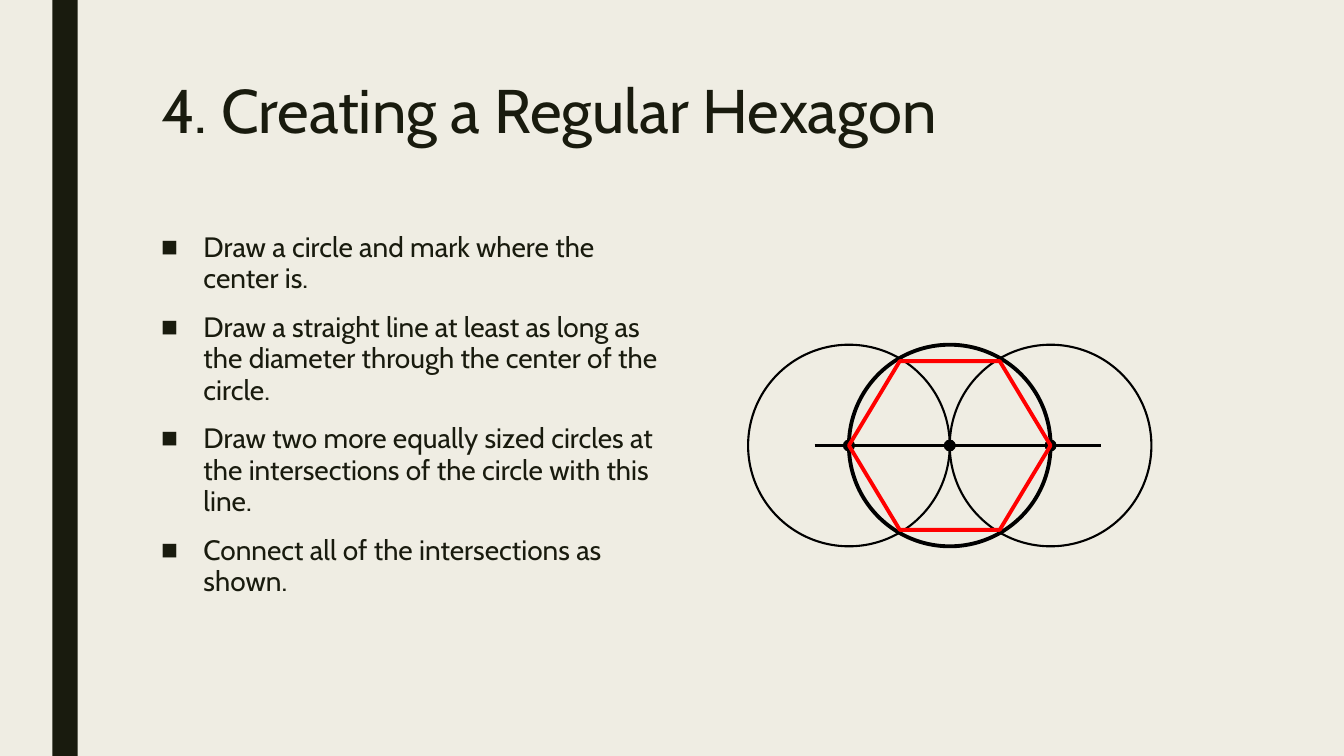
from lxml.etree import SubElement
from pptx import Presentation
from pptx.dml.color import RGBColor
from pptx.enum.shapes import MSO_CONNECTOR, MSO_SHAPE
from pptx.enum.text import MSO_ANCHOR
from pptx.oxml.ns import qn
from pptx.util import Inches, Pt

COLORS = {"paper": "EFEDE3", "ink": "191B0E", "halo": "F0EDE3",
          "black": "000000", "red": "FF0000"}
STEPS = [
    "Draw a circle and mark where the center is.",
    "Draw a straight line at least as long as the diameter through the center of the circle.",
    "Draw two more equally sized circles at the intersections of the circle with this line.",
    "Connect all of the intersections as shown.",
]
MID_X, MID_Y, RADIUS = 9.42, 4.42, 1


def color(name):
    return RGBColor.from_string(COLORS[name])


def write(para, text, size=20, leading=0.94, before=0, after=0, indent=0, bullet=None):
    run = para.add_run()
    run.text = text
    run.font.name = "Cabin"
    run.font.size = Pt(size)
    run.font.color.rgb = color("ink")
    para.line_spacing = leading
    para.space_before = Pt(before)
    para.space_after = Pt(after)
    if bullet:
        props = para._p.get_or_add_pPr()
        props.set("marL", str(Inches(indent)))
        props.set("indent", str(-Inches(indent)))
        SubElement(props, qn("a:buFont")).set("typeface", "Arial")
        SubElement(props, qn("a:buChar")).set("char", bullet)


class Canvas:
    def __init__(self, slide):
        self.slide = slide
        slide.background.fill.solid()
        slide.background.fill.fore_color.rgb = color("paper")

    def shape(self, kind, x, y, w, h, fill=None, line=None, width=1.5):
        item = self.slide.shapes.add_shape(kind, Inches(x), Inches(y), Inches(w), Inches(h))
        item.shadow.inherit = False
        if fill:
            item.fill.solid()
            item.fill.fore_color.rgb = color(fill)
        else:
            item.fill.background()
        if line:
            item.line.color.rgb = color(line)
            item.line.width = Pt(width)
        else:
            item.line.fill.background()
        return item

    def circle(self, x, y, r, **style):
        return self.shape(MSO_SHAPE.OVAL, x - r, y - r, 2 * r, 2 * r, **style)

    def dot(self, x):
        return self.circle(x, MID_Y, 0.085, fill="black", line="halo", width=3.25)

    def line(self, x1, y1, x2, y2, tone="black", width=1.5):
        item = self.slide.shapes.add_connector(
            MSO_CONNECTOR.STRAIGHT, Inches(x1), Inches(y1), Inches(x2), Inches(y2))
        item.line.color.rgb = color(tone)
        item.line.width = Pt(width)
        SubElement(item._element.spPr, qn("a:effectLst"))
        return item

    def text(self, x, y, w, h, lines, **style):
        box = self.slide.shapes.add_textbox(Inches(x), Inches(y), Inches(w), Inches(h))
        frame = box.text_frame
        frame.word_wrap = True
        frame.vertical_anchor = MSO_ANCHOR.TOP
        for i, words in enumerate(lines):
            para = frame.add_paragraph() if i else frame.paragraphs[0]
            write(para, words, **style)
        return box


def main():
    deck = Presentation()
    deck.slide_width, deck.slide_height = Inches(13.33), Inches(7.5)
    art = Canvas(deck.slides.add_slide(deck.slide_layouts[6]))

    art.shape(MSO_SHAPE.RECTANGLE, 0.52, 0, 0.25, 7.5, fill="ink")
    for side in (1, -1):
        art.dot(MID_X + side * RADIUS)
    art.text(1.5, 0.75, 10.5, 1.62, ["4. Creating a Regular Hexagon"], size=44, leading=0.89)
    art.text(1.5, 2.25, 5.13, 3.92, STEPS, before=10, after=2, indent=0.42, bullet="■")

    art.circle(MID_X, MID_Y, RADIUS, line="black", width=2.75)
    art.dot(MID_X)
    for side in (1, -1):
        art.circle(MID_X + side * RADIUS, MID_Y, RADIUS, line="black")
    art.line(MID_X - 1.34, MID_Y, MID_X + 1.5, MID_Y)

    tall = 1.68
    hexagon = art.shape(MSO_SHAPE.HEXAGON, MID_X - RADIUS, MID_Y - tall / 2,
                        2 * RADIUS, tall, line="red", width=2.75)
    hexagon.adjustments[0] = 0.3
    hexagon.adjustments[1] = 1.15
    deck.save("out.pptx")


if __name__ == "__main__":
    main()
